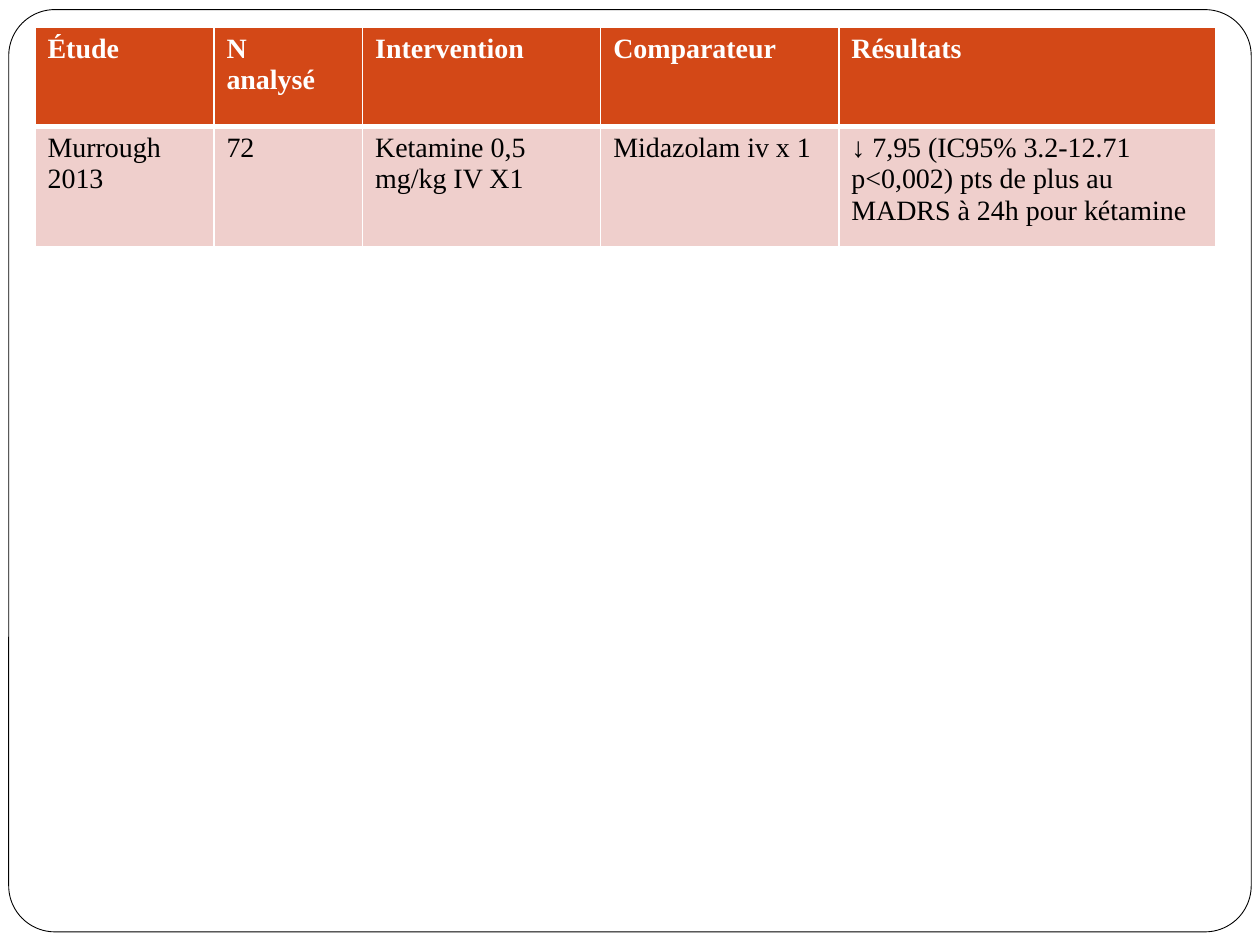
from dataclasses import dataclass

from lxml.etree import SubElement
from pptx import Presentation
from pptx.dml.color import RGBColor as Color
from pptx.enum.shapes import MSO_SHAPE as Shape
from pptx.oxml.ns import qn
from pptx.util import Pt


@dataclass(frozen=True)
class Theme:
    """Colours, fonts and sizes of the deck."""
    white: str = "FFFFFF"
    black: str = "000000"
    header: str = "D34817"
    body: str = "EFCFCC"
    font: str = "Times New Roman"
    symbol_font: str = "Arial"
    size: float = 16
    frame_line: float = 0.5
    rule: float = 1
    header_rule: float = 3


THEME = Theme()
COLUMNS = [102.24, 84.96, 136.08, 136.08, 215.28]
ROWS = [56.88, 69.12]
HEADINGS = ["Étude", "N\nanalysé", "Intervention", "Comparateur", "Résultats"]
STUDY = [
    "Murrough 2013",
    "72",
    "Ketamine 0,5 mg/kg IV X1",
    "Midazolam iv x 1",
    "↓ 7,95 (IC95% 3.2-12.71 p<0,002) pts de plus au MADRS à 24h pour kétamine",
]


def paint(fill, colour):
    """Give a fill one solid colour."""
    fill.solid()
    fill.fore_color.rgb = Color.from_string(colour)


def add_frame(page, left, top, width, height):
    """Draw the rounded page frame in the given box."""
    frame = page.shapes.add_shape(
        Shape.ROUNDED_RECTANGLE, Pt(left), Pt(top), Pt(width), Pt(height))
    frame.adjustments[0] = 0.05
    frame.shadow.inherit = False
    paint(frame.fill, THEME.white)
    paint(frame.line.fill, THEME.black)
    frame.line.width = Pt(THEME.frame_line)


def set_borders(cell, widths):
    """Put white rules on the cell's edges, keyed by edge letter."""
    props = cell._tc.get_or_add_tcPr()
    for place, (edge, width) in enumerate(widths.items()):
        line = SubElement(props, qn(f"a:ln{edge}"), w=str(Pt(width)))
        fill = SubElement(line, qn("a:solidFill"))
        SubElement(fill, qn("a:srgbClr"), val=THEME.white)
        props.insert(place, line)


def write_cell(cell, text, colour, bold):
    """Write the text, with a leading arrow in the symbol font."""
    for number, words in enumerate(text.split("\n")):
        frame = cell.text_frame
        para = frame.add_paragraph() if number else frame.paragraphs[0]
        arrow = "↓" if words.startswith("↓") else ""
        parts = [(arrow, THEME.symbol_font),
                 (words.removeprefix("↓"), THEME.font)]
        for part, font in parts:
            if part:
                span = para.add_run()
                span.text = part
                span.font.color.rgb = Color.from_string(colour)
                style = {"name": font, "size": Pt(THEME.size), "bold": bold}
                for name, value in style.items():
                    setattr(span.font, name, value)


def add_study_table(page, left, top, width, height):
    """Place the table of studies in the given box."""
    table = page.shapes.add_table(
        len(ROWS), len(COLUMNS), Pt(left), Pt(top), Pt(width), Pt(height)).table
    for column, size in zip(table.columns, COLUMNS):
        column.width = Pt(size)
    for row, size in zip(table.rows, ROWS):
        row.height = Pt(size)
    looks = [
        (HEADINGS, THEME.header, THEME.white, True,
         THEME.rule, THEME.header_rule),
        (STUDY, THEME.body, THEME.black, False,
         THEME.header_rule, THEME.rule),
    ]
    for row, (texts, fill, colour, bold, above, below) in zip(table.rows, looks):
        for cell, text in zip(row.cells, texts):
            paint(cell.fill, fill)
            write_cell(cell, text, colour, bold)
            set_borders(cell, {"L": THEME.rule, "R": THEME.rule,
                               "T": above, "B": below})


def main():
    """Build and save the deck."""
    deck = Presentation()
    deck.slide_width, deck.slide_height = Pt(720), Pt(540)
    page = deck.slides.add_slide(deck.slide_layouts[6])
    paint(page.background.fill, THEME.white)
    add_frame(page, 5, 5.5, 710, 527)
    add_study_table(page, 20, 15.3, sum(COLUMNS), sum(ROWS))
    deck.save("out.pptx")


if __name__ == "__main__":
    main()
